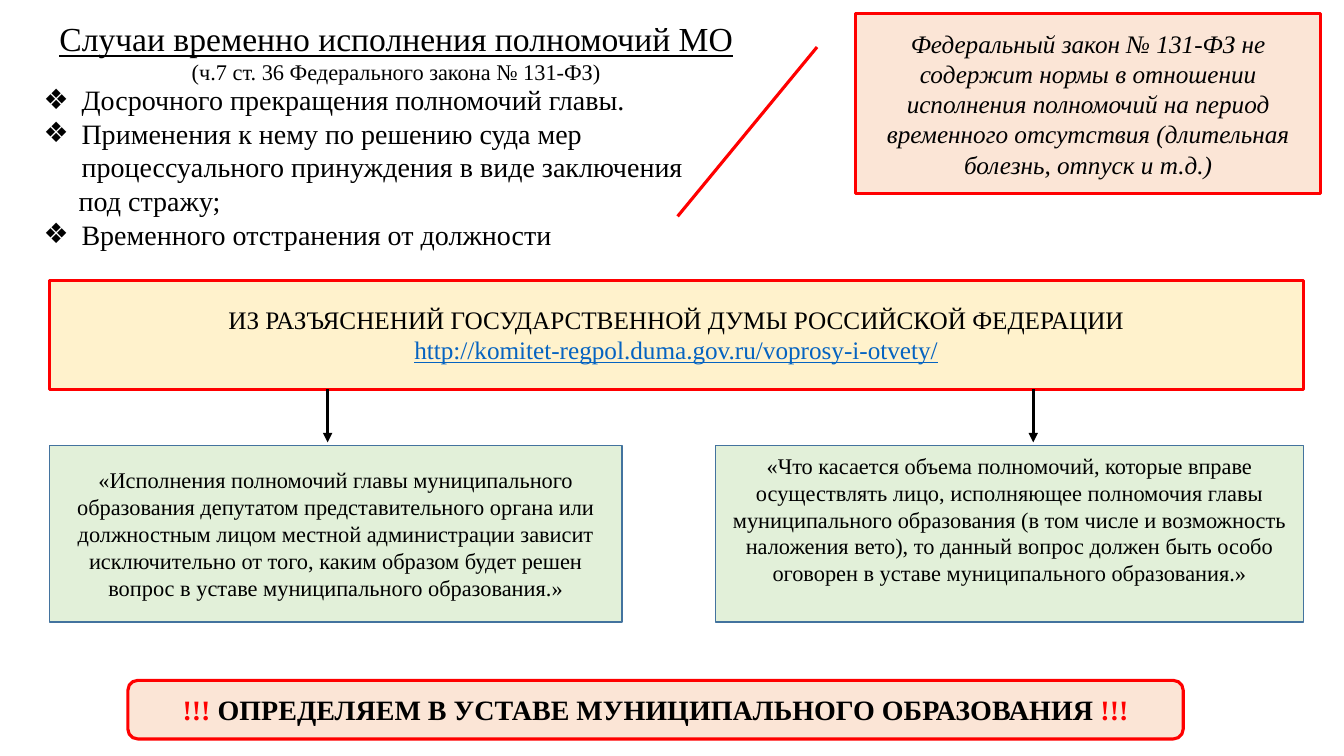
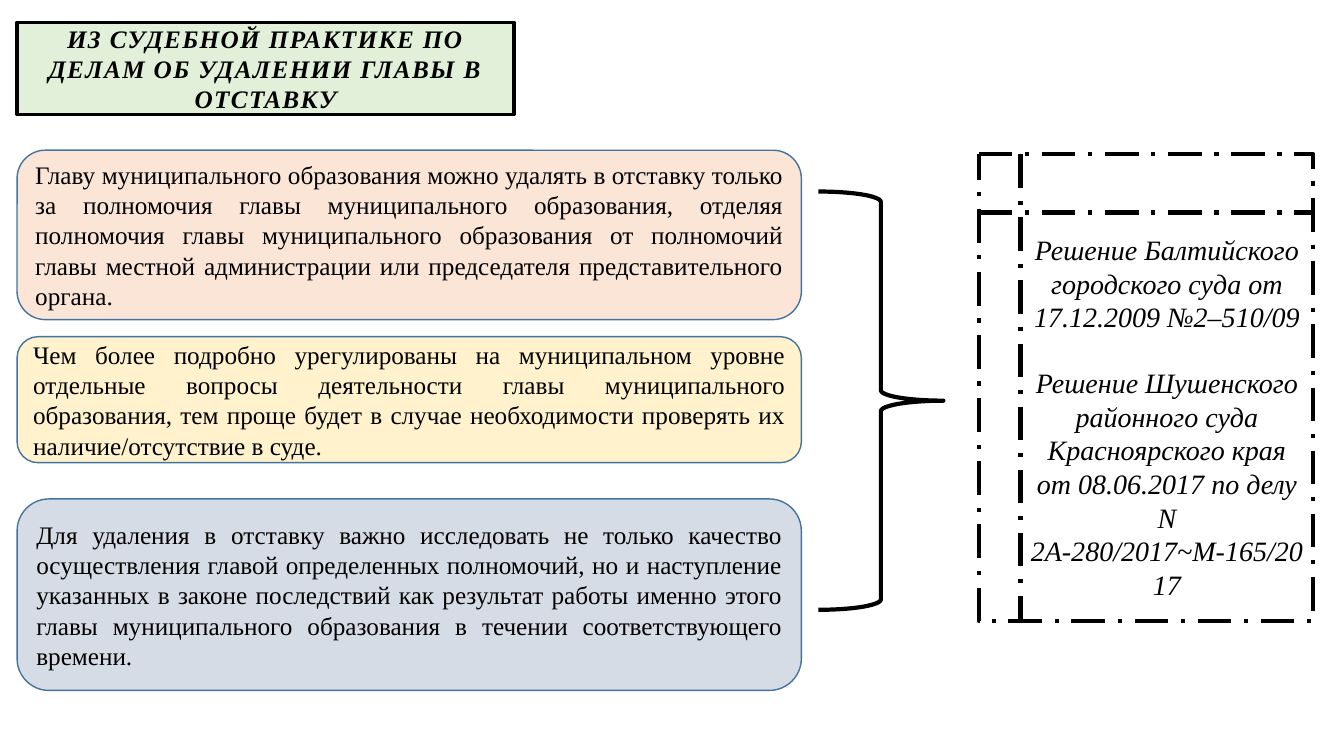
from lxml.etree import SubElement
from pptx import Presentation
from pptx.dml.color import RGBColor
from pptx.enum.dml import MSO_LINE
from pptx.enum.shapes import MSO_CONNECTOR, MSO_SHAPE as Shape
from pptx.enum.text import MSO_ANCHOR as Anchor, MSO_AUTO_SIZE, PP_ALIGN as Align
from pptx.oxml.ns import qn
from pptx.util import Pt

FONT = "Times New Roman"
BLACK, RED, BLUE, LINK = "000000", "FF0000", "43739E", "0563C1"
PEACH, CREAM, GREEN, GRAY = "FBE5D6", "FFF2CC", "E2F0D9", "D6DCE5"
TITLE_AND_BODY, TITLE_ONLY = 1, 5


def rgb(value):
    return RGBColor.from_string(value)


class Slides:
    """Holds the deck, its style and the slide being filled."""

    def __init__(self):
        self.deck = Presentation()
        self.deck.slide_width, self.deck.slide_height = Pt(960), Pt(540)
        self.page = None

    def new_page(self, layout):
        self.page = self.deck.slides.add_slide(self.deck.slide_layouts[layout])

    def place(self, box, left, top, width, height):
        box.left, box.top, box.width, box.height = map(Pt, (left, top, width, height))

    def outline(self, box, color, width):
        box.line.color.rgb = rgb(color)
        box.line.width = Pt(width)

    def paint(self, box, fill, line, width):
        if fill:
            box.fill.solid()
            box.fill.fore_color.rgb = rgb(fill)
        else:
            box.fill.background()
        self.outline(box, line, width)

    def style(self, para, size, align=Align.CENTER, bold=False, italic=False):
        para.alignment = align
        para.space_before = Pt(0)
        font = para.font
        font.name, font.size, font.bold, font.italic = FONT, Pt(size), bold, italic
        font.color.rgb = rgb(BLACK)

    def set_text(self, frame, texts, size, **look):
        """Fills a frame with one paragraph per text and returns the paragraphs."""
        frame.word_wrap = True
        frame.auto_size = MSO_AUTO_SIZE.NONE
        frame.text = "\n".join(texts)
        for para in frame.paragraphs:
            self.style(para, size, **look)
        return frame.paragraphs

    def title(self, area, texts, size, anchor, **look):
        box = self.page.shapes.title
        self.place(box, *area)
        paras = self.set_text(box.text_frame, texts, size, **look)
        box.text_frame.vertical_anchor = anchor
        return box, paras

    def bullets(self, area, items, size):
        """Lists (text, mark) pairs; an item without a mark is only indented."""
        box = self.page.placeholders[1]
        self.place(box, *area)
        paras = self.set_text(box.text_frame, [text for text, _ in items], size,
                              align=Align.LEFT)
        for para, (_, mark) in zip(paras, items):
            props = para._p.get_or_add_pPr()
            margin, indent = (27, -27) if mark else (25, 0)
            props.set("marL", str(Pt(margin)))
            props.set("indent", str(Pt(indent)))
            bullet = props.makeelement(qn("a:buChar" if mark else "a:buNone"))
            if mark:
                bullet.set("char", mark)
            props.find(qn("a:defRPr")).addprevious(bullet)

    def box(self, kind, area, fill, line, width, texts=(), size=18, **look):
        box = self.page.shapes.add_shape(kind, *map(Pt, area))
        box.shadow.inherit = False
        self.paint(box, fill, line, width)
        if texts:
            self.set_text(box.text_frame, texts, size, **look)
        return box

    def arrow(self, x, top, bottom):
        arrow = self.page.shapes.add_connector(
            MSO_CONNECTOR.STRAIGHT, Pt(x), Pt(top), Pt(x), Pt(bottom))
        self.outline(arrow, BLACK, 2.25)
        props = arrow._element.spPr
        SubElement(props.find(qn("a:ln")), qn("a:tailEnd"), type="triangle")
        SubElement(props, qn("a:effectLst"))


def powers_page(slides):
    slides.new_page(TITLE_AND_BODY)
    _, heading = slides.title(
        (24, 9.4, 518, 50),
        ["Случаи временно исполнения полномочий МО",
         "(ч.7 ст. 36 Федерального закона № 131-ФЗ)"], 24, Anchor.TOP)
    heading[0].font.underline = True
    heading[1].font.size = Pt(16)
    slides.bullets((24, 55.5, 518, 131), [
        ("Досрочного прекращения полномочий главы.", "❖"),
        ("Применения к нему по решению суда мер процессуального принуждения "
         "в виде заключения", "❖"),
        ("под стражу;", None),
        ("Временного отстранения от должности", "❖")], 20)
    slides.box(
        Shape.LINE_CALLOUT_1, (611.3, 9.4, 332, 129), PEACH, RED, 2.25,
        ["Федеральный закон № 131-ФЗ не содержит нормы в отношении исполнения "
         "полномочий на период временного отсутствия (длительная болезнь, отпуск и т.д.)"],
        italic=True)

    banner = slides.box(
        Shape.RECTANGLE, (35.3, 200.2, 895.7, 77.8), CREAM, RED, 2.25,
        ["ИЗ РАЗЪЯСНЕНИЙ ГОСУДАРСТВЕННОЙ ДУМЫ РОССИЙСКОЙ ФЕДЕРАЦИИ",
         "http://komitet-regpol.duma.gov.ru/voprosy-i-otvety/"])
    address = banner.text_frame.paragraphs[1].font
    address.color.rgb = rgb(LINK)
    address.underline = True

    quotes = [
        (35.3, 409, 3.6, 234,
         "«Исполнения полномочий главы муниципального образования депутатом "
         "представительного органа или должностным лицом местной администрации зависит "
         "исключительно от того, каким образом будет решен вопрос в уставе "
         "муниципального образования.»"),
        (511.2, 419.8, 24.4, 738,
         "«Что касается объема полномочий, которые вправе осуществлять лицо, исполняющее "
         "полномочия главы муниципального образования (в том числе и возможность "
         "наложения вето), то данный вопрос должен быть особо оговорен в уставе "
         "муниципального образования.»")]
    for left, width, bottom_inset, arrow_x, text in quotes:
        quote = slides.box(
            Shape.RECTANGLE, (left, 318.2, width, 126), GREEN, BLUE, 1, [text], 16)
        quote.text_frame.margin_bottom = Pt(bottom_inset)
        slides.arrow(arrow_x, 278, 316)

    verdict = slides.box(
        Shape.ROUNDED_RECTANGLE, (91.4, 486, 753.8, 41.8), PEACH, RED, 2.25)
    para = verdict.text_frame.paragraphs[0]
    slides.style(para, 20, bold=True)
    for text, color in [("!!!", RED),
                        (" ОПРЕДЕЛЯЕМ В УСТАВЕ МУНИЦИПАЛЬНОГО ОБРАЗОВАНИЯ ", BLACK),
                        ("!!!", RED)]:
        span = para.add_run()
        span.text = text
        span.font.color.rgb = rgb(color)


def practice_page(slides):
    slides.new_page(TITLE_ONLY)
    box, heading = slides.title(
        (12.2, 15.8, 355, 66.2),
        ["ИЗ СУДЕБНОЙ ПРАКТИКЕ ПО ДЕЛАМ ОБ УДАЛЕНИИ ГЛАВЫ В ОТСТАВКУ"],
        18, Anchor.MIDDLE, bold=True, italic=True)
    slides.paint(box, GREEN, BLACK, 2.25)
    heading[0]._p.pPr.find(qn("a:defRPr")).set("spc", "100")

    findings = [
        (107.3, 121, PEACH,
         "Главу муниципального образования можно удалять в отставку только за полномочия "
         "главы муниципального образования, отделяя полномочия главы муниципального "
         "образования от полномочий главы местной администрации или председателя "
         "представительного органа."),
        (240.5, 90, CREAM,
         "Чем более подробно урегулированы на муниципальном уровне отдельные вопросы "
         "деятельности главы муниципального образования, тем проще будет в случае "
         "необходимости проверять их наличие/отсутствие в суде."),
        (356.4, 136.8, GRAY,
         "Для удаления в отставку важно исследовать не только качество осуществления "
         "главой определенных полномочий, но и наступление указанных в законе последствий "
         "как результат работы именно этого главы муниципального образования в течении "
         "соответствующего времени.")]
    for top, height, fill, text in findings:
        slides.box(Shape.ROUNDED_RECTANGLE, (12.2, top, 560.2, height), fill, BLUE, 1,
                   [text], align=Align.JUSTIFY)

    slides.box(Shape.RIGHT_BRACE, (584.6, 136.8, 89.3, 298.8), None, BLACK, 3)
    rulings = slides.box(
        Shape.FLOWCHART_INTERNAL_STORAGE, (699.1, 110.2, 239, 333.4), None, BLACK, 3,
        ["Решение Балтийского городского суда от 17.12.2009 №2–510/09",
         "Решение Шушенского районного суда Красноярского края от 08.06.2017 "
         "по делу N 2А-280/2017~М-165/2017"], 20, italic=True)
    rulings.line.dash_style = MSO_LINE.LONG_DASH_DOT
    rulings.text_frame.paragraphs[1].space_before = Pt(23)


def main():
    slides = Slides()
    powers_page(slides)
    practice_page(slides)
    slides.deck.save("out.pptx")


if __name__ == "__main__":
    main()
